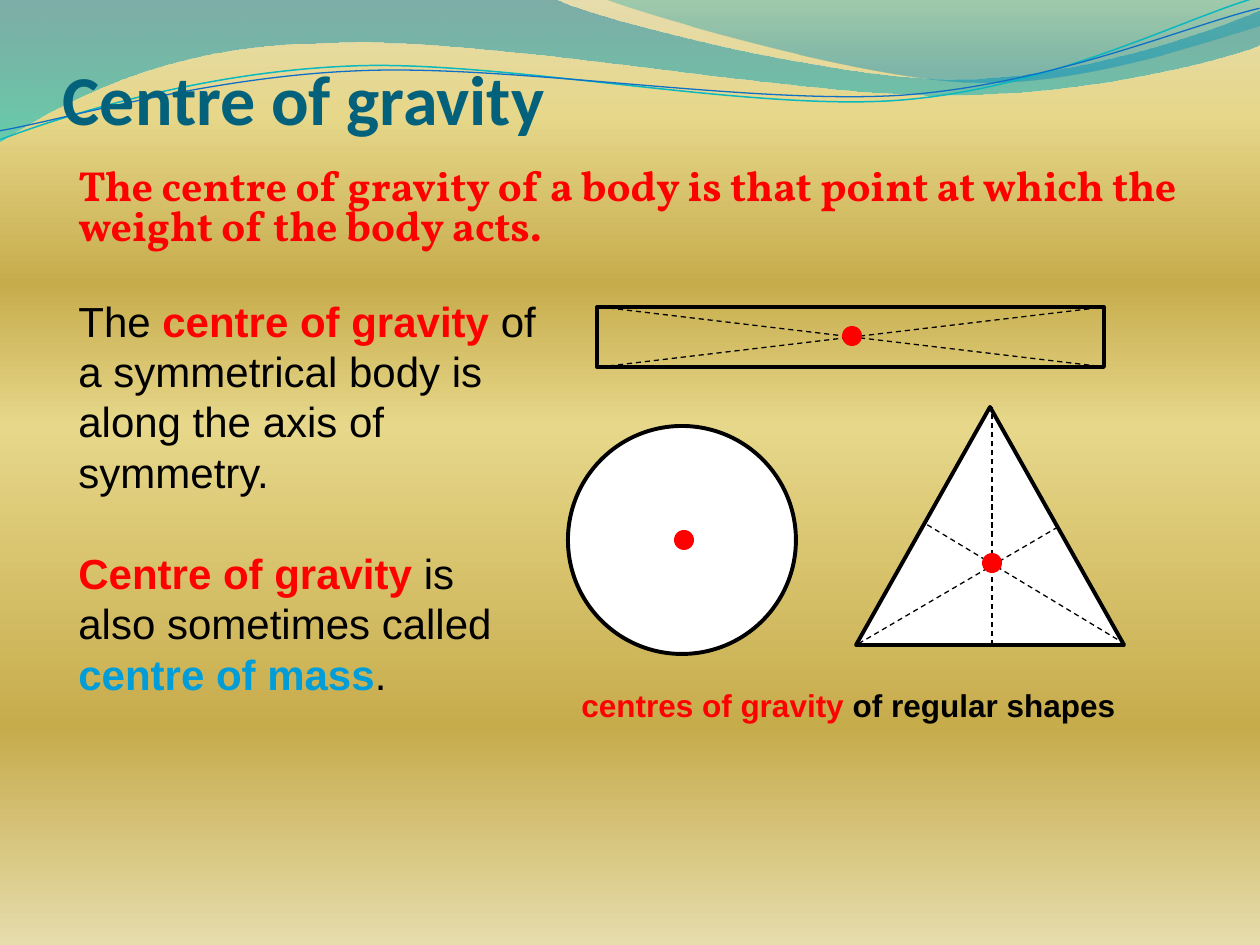
"""Build the slide on the centre of gravity of regular shapes."""
from lxml.etree import SubElement as Sub
from pptx import Presentation
from pptx.dml.color import RGBColor
from pptx.enum.dml import MSO_LINE as Dash
from pptx.enum.shapes import MSO_CONNECTOR as Conn, MSO_SHAPE as Kind
from pptx.enum.text import MSO_ANCHOR as Anchor
from pptx.oxml.ns import qn
from pptx.util import Pt

PX = 914400 / 126
hue = RGBColor.from_string


def emu(*vals):
    return [round(v * PX) for v in vals]


def shade(fill, root, stops):
    fill.gradient()
    fill.gradient_angle = 270
    stop_list = root.find(".//" + qn("a:gsLst"))
    for old in list(stop_list):
        stop_list.remove(old)
    for pos, color, alpha in stops:
        stop = Sub(stop_list, qn("a:gs"), pos=str(pos * 1000))
        tint = Sub(stop, qn("a:srgbClr"), val=color)
        if alpha < 100:
            Sub(tint, qn("a:alpha"), val=str(alpha * 1000))


prs = Presentation()
prs.slide_width, prs.slide_height = emu(1260, 945)
slide = prs.slides.add_slide(prs.slide_layouts[6])
shapes = slide.shapes

shade(slide.background.fill, slide.element, [
    (0, "E6DCAC", 100), (12, "E6D78A", 100), (30, "C7AC4C", 100),
    (45, "E6D78A", 100), (77, "C7AC4C", 100), (100, "E6DCAC", 100)])

waves = [
    {"start": (0, -1), "stops": [(0, "0074A1", 45), (100, "00C6CF", 55)],
     "steps": [(554, -1), (600, 21, 837, 79, 955, 79),
               (1075, 79, 1207, 33, 1260, 11), (1261, 45),
               (1239, 55, 1096, 96, 940, 95), (784, 95, 481, 35, 324, 43),
               (163, 44, 58, 105, -1, 142)]},
    {"start": (604, -1), "stops": [(0, "00A1A9", 30), (80, "008BBF", 45)],
     "steps": [(641, 14, 859, 78, 969, 82), (1079, 87, 1211, 40, 1260, 26),
               (1260, 0)]},
    {"start": (-2, 110), "line": ("0AB8BF", 0.85),
     "steps": [(59, 90, 200, 52, 350, 53), (499, 53, 745, 117, 896, 113),
               (1048, 109, 1184, 45, 1260, 27)]},
    {"start": (-2, 101), "line": ("0F6FC6", 0.75),
     "steps": [(57, 94, 207, 57, 357, 58), (509, 58, 750, 111, 902, 108),
               (1052, 104, 1188, 52, 1262, 38)]},
]
for wave in waves:
    path = shapes.build_freeform(*emu(*wave["start"]), scale=1)
    path.add_line_segments(
        [emu(*spot) for step in wave["steps"]
         for spot in zip(step[::2], step[1::2])], close="stops" in wave)
    curve = path.convert_to_shape()
    curve.shadow.inherit = False
    nodes = iter(curve.element.findall(".//" + qn("a:lnTo")))
    for step in wave["steps"]:
        bend = next(nodes)
        if len(step) == 6:
            bend.tag = qn("a:cubicBezTo")
            for node in (next(nodes), next(nodes)):
                bend.append(node[0])
                node.getparent().remove(node)
    if "stops" in wave:
        shade(curve.fill, curve.element, wave["stops"])
        curve.line.fill.background()
    else:
        color, width = wave["line"]
        curve.rotation = 357.3
        curve.fill.background()
        curve.line.color.rgb = hue(color)
        curve.line.width = Pt(width)

for kind, box, fill in [
        (Kind.OVAL, (568, 426, 228, 228), "FFFFFF"),
        (Kind.ISOSCELES_TRIANGLE, (856, 407, 268, 238), "FFFFFF"),
        (Kind.RECTANGLE, (597, 307, 507, 60), None)]:
    body = shapes.add_shape(kind, *emu(*box))
    body.shadow.inherit = False
    body.line.color.rgb = hue("000000")
    body.line.width = Pt(2.25)
    if fill:
        body.fill.solid()
        body.fill.fore_color.rgb = hue(fill)
    else:
        body.fill.background()

RED, BLACK, BLUE = ("FF0000", True), ("000000", False), ("009DD9", True)
texts = [
    {"box": (569, 680, 599, 50), "font": {"name": "Arial", "size": Pt(18)},
     "paras": [[("centres of gravity", RED),
                (" of regular shapes", ("000000", True))]]},
    {"box": (63, 38, 1133, 102), "font": {"name": "Calibri", "size": Pt(40)},
     "frame": {"margin_left": 0, "margin_right": 0, "margin_bottom": 0,
               "vertical_anchor": Anchor.BOTTOM},
     "paras": [[("Centre of gravity", ("04617B", True))]]},
    {"box": (66, 163, 1134, 103), "font": {"name": "Vollkorn", "size": Pt(24)},
     "para": {"line_spacing": 0.8},
     "paras": [[("The centre of gravity of a body is that point at which the "
                 "weight of the body acts.", RED)]]},
    {"box": (66, 289, 485, 465), "font": {"name": "Arial", "size": Pt(24)},
     "next": {"space_before": Pt(29)},
     "paras": [[("The ", BLACK), ("centre of gravity", RED),
                (" of a symmetrical body is along the axis of symmetry.",
                 BLACK)],
               [("Centre of gravity", RED),
                (" is also sometimes called ", BLACK),
                ("centre of mass", BLUE), (".", BLACK)]]},
]
for text in texts:
    frame = shapes.add_textbox(*emu(*text["box"])).text_frame
    frame.word_wrap = True
    for key, val in text.get("frame", {}).items():
        setattr(frame, key, val)
    for i, runs in enumerate(text["paras"]):
        para = frame.add_paragraph() if i else frame.paragraphs[0]
        for key, val in text.get("next" if i else "para", {}).items():
            setattr(para, key, val)
        for words, (color, bold) in runs:
            run = para.add_run()
            run.text = words
            run.font.color.rgb = hue(color)
            for key, val in {**text["font"], "bold": bold}.items():
                setattr(run.font, key, val)

for ends in [(600, 367, 1105, 307), (600, 307, 1105, 367),
             (992, 645, 992, 407), (1058, 527, 858, 644),
             (1125, 644, 926, 524)]:
    axis = shapes.add_connector(Conn.STRAIGHT, *emu(*ends))
    axis.line.color.rgb = hue("000000")
    axis.line.width = Pt(0.75)
    axis.line.dash_style = Dash.DASH
    Sub(axis.element.spPr, qn("a:effectLst"))

for left, top in [(842, 326), (674, 530), (982, 553)]:
    dot = shapes.add_shape(Kind.OVAL, *emu(left, top, 20, 20))
    dot.shadow.inherit = False
    dot.fill.solid()
    dot.fill.fore_color.rgb = hue("FF0000")
    dot.line.fill.background()

prs.save("out.pptx")
